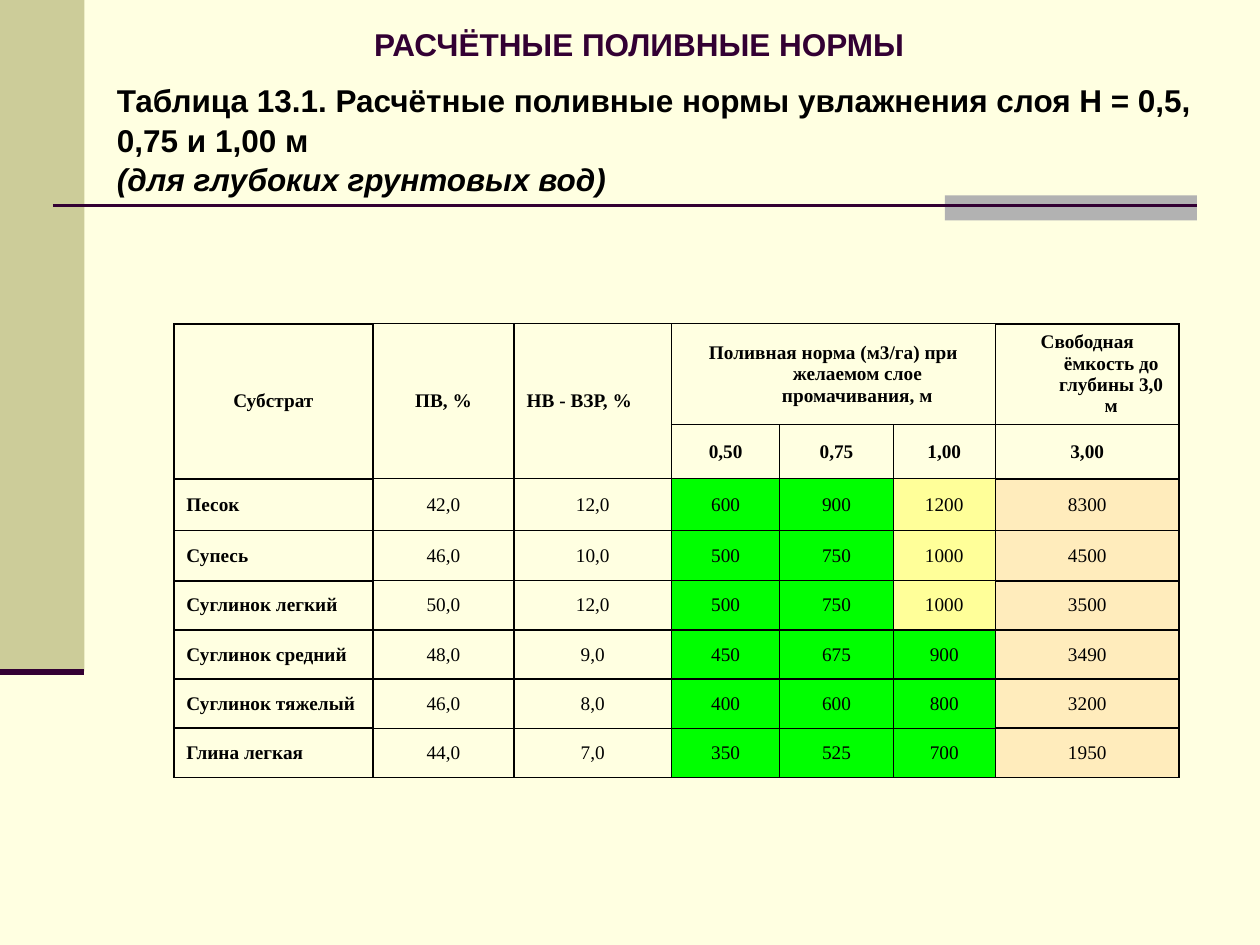
import pptx
import pptx.util
import pptx.dml.color
import pptx.enum.shapes
import pptx.enum.text
import pptx.oxml
import pptx.oxml.ns
import lxml.etree

Inches = pptx.util.Inches
Pt = pptx.util.Pt
ALIGN = pptx.enum.text.PP_ALIGN
MIDDLE = pptx.enum.text.MSO_ANCHOR.MIDDLE


def color(value):
    return pptx.dml.color.RGBColor.from_string(value)


def write(para, text, font_color, **formats):
    span = para.add_run()
    span.text = text
    span.font.color.rgb = color(font_color)
    for name, value in formats.items():
        setattr(span.font, name, value)


deck = pptx.Presentation()
deck.slide_width = Inches(10)
deck.slide_height = Inches(7.5)
page = deck.slides.add_slide(deck.slide_layouts[5])
page.background.fill.solid()
page.background.fill.fore_color.rgb = color("FFFFE1")

for left, top, width, height, fill in [
    (0, 0, 0.67, 5.33, "CCCC99"),
    (7.5, 1.55, 2, 0.2, "B2B2B2"),
]:
    panel = page.shapes.add_shape(
        pptx.enum.shapes.MSO_SHAPE.RECTANGLE,
        Inches(left), Inches(top), Inches(width), Inches(height))
    panel.shadow.inherit = False
    panel.fill.solid()
    panel.fill.fore_color.rgb = color(fill)
    panel.line.fill.background()

for left, right, height, weight in [(0.42, 9.5, 1.63, 1.5), (0, 0.67, 5.33, 3.5)]:
    rule = page.shapes.add_connector(
        pptx.enum.shapes.MSO_CONNECTOR.STRAIGHT,
        Inches(left), Inches(height), Inches(right), Inches(height))
    rule.line.color.rgb = color("330033")
    rule.line.width = Pt(weight)
    lxml.etree.SubElement(
        rule._element.spPr, pptx.oxml.ns.qn("a:effectLst"))

heading = {"name": "Arial", "size": Pt(18), "bold": True}
title = page.shapes.title
for name, value in {"left": 2.87, "top": 0, "width": 6.56, "height": 0.44}.items():
    setattr(title, name, Inches(value))
for name, value in {
    "vertical_anchor": pptx.enum.text.MSO_ANCHOR.TOP,
    "auto_size": pptx.enum.text.MSO_AUTO_SIZE.NONE,
    "margin_top": Inches(0.2),
    "margin_bottom": 0,
}.items():
    setattr(title.text_frame, name, value)
para = title.text_frame.paragraphs[0]
para.alignment = ALIGN.LEFT
write(para, "РАСЧЁТНЫЕ ПОЛИВНЫЕ НОРМЫ", "330033", **heading)

columns = [1.58, 1.12, 1.25, 0.86, 0.9, 0.81, 1.46]
heights = [0.8, 0.43, 0.41, 0.4] + [0.39] * 4
rows = [
    ["Субстрат", "ПВ, %", "НВ - ВЗР, %",
     "Поливная норма (м3/га) при желаемом слое промачивания, м", "", "",
     "Свободная ёмкость до глубины 3,0 м"],
    ["", "", "", "0,50", "0,75", "1,00", "3,00"],
    ["Песок", "42,0", "12,0", "600", "900", "1200", "8300"],
    ["Супесь", "46,0", "10,0", "500", "750", "1000", "4500"],
    ["Суглинок легкий", "50,0", "12,0", "500", "750", "1000", "3500"],
    ["Суглинок средний", "48,0", "9,0", "450", "675", "900", "3490"],
    ["Суглинок тяжелый", "46,0", "8,0", "400", "600", "800", "3200"],
    ["Глина легкая", "44,0", "7,0", "350", "525", "700", "1950"],
]
table = page.shapes.add_table(
    len(rows), len(columns), Inches(1.38), Inches(2.57),
    Inches(sum(columns)), Inches(sum(heights))).table
for column, width in zip(table.columns, columns):
    column.width = Inches(width)
for row, height in zip(table.rows, heights):
    row.height = Inches(height)
for column in range(3):
    table.cell(0, column).merge(table.cell(1, column))
table.cell(0, 3).merge(table.cell(0, 5))

for row, texts in enumerate(rows):
    for column, text in enumerate(texts):
        cell = table.cell(row, column)
        cell.vertical_anchor = MIDDLE
        weight, edge = (1, "010000") if column in (0, 6) else (0.75, "000000")
        for side in ("lnL", "lnR", "lnT", "lnB"):
            cell._tc.get_or_add_tcPr().append(pptx.oxml.parse_xml(
                f'<a:{side} {pptx.oxml.ns.nsdecls("a")} w="{Pt(weight)}">'
                f'<a:solidFill><a:srgbClr val="{edge}"/></a:solidFill></a:{side}>'))
        if row < 2 or column < 3:
            cell.fill.background()
        else:
            cell.fill.solid()
            if column == 6:
                fill = "FFECBC"
            else:
                fill = "FFFF99" if int(text) >= 1000 else "00FF00"
            cell.fill.fore_color.rgb = color(fill)
        if not text:
            continue
        para = cell.text_frame.paragraphs[0]
        left_aligned = (row > 1 and column == 0) or (row == 0 and column == 2)
        para.alignment = ALIGN.LEFT if left_aligned else ALIGN.CENTER
        indents = para._p.get_or_add_pPr()
        indents.set("marL", str(Inches(0.38)))
        indents.set("indent", str(Inches(-0.38)))
        write(para, text, "000000", name="Times New Roman", size=Pt(11),
              bold=row < 2 or column == 0)

caption = page.shapes.add_textbox(
    Inches(0.83), Inches(0.6), Inches(8.74), Inches(1)).text_frame
caption.word_wrap = True
caption.vertical_anchor = MIDDLE
para = caption.paragraphs[0]
para.line_spacing = 1.05
write(para, "Таблица 13.1. Расчётные поливные нормы увлажнения слоя Н = 0,5, "
      "0,75 и 1,00 м", "000000", **heading)
para.add_line_break()
write(para, "(для глубоких грунтовых вод)", "000000", italic=True, **heading)

deck.save("out.pptx")
